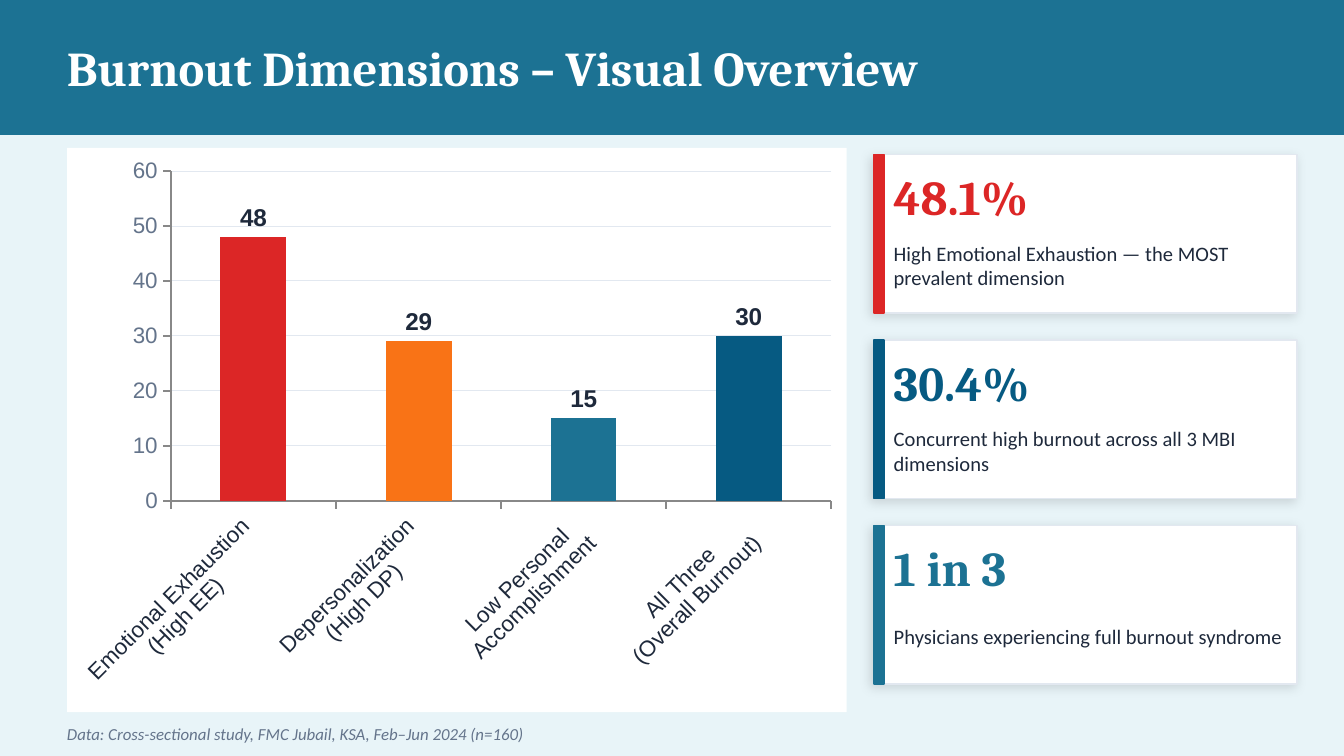
from dataclasses import dataclass
from typing import NamedTuple

from lxml.etree import SubElement
from pptx import Presentation
from pptx.chart.chart import Chart
from pptx.chart.data import CategoryChartData
from pptx.dml.color import RGBColor
from pptx.enum.chart import XL_CHART_TYPE, XL_LABEL_POSITION, XL_TICK_LABEL_POSITION, XL_TICK_MARK
from pptx.enum.shapes import MSO_SHAPE
from pptx.enum.text import MSO_ANCHOR
from pptx.oxml import parse_xml
from pptx.oxml.ns import nsdecls, qn
from pptx.shapes.autoshape import Shape
from pptx.slide import Slide
from pptx.util import Emu, Pt

EMU_PER_PX = 4572


@dataclass(frozen=True)
class Theme:
    background: str = "E8F4F8"
    white: str = "FFFFFF"
    teal: str = "1C7293"
    red: str = "DC2626"
    orange: str = "F97316"
    navy: str = "065A82"
    ink: str = "1E293B"
    muted: str = "64748B"
    border: str = "E2E8F0"
    axis: str = "888888"
    heading_font: str = "Cambria"
    body_font: str = "Calibri"
    chart_font: str = "Arial"
    heading_size: int = 26
    body_size: int = 11
    source_size: int = 9
    axis_size: int = 12
    label_size: int = 13


class Box(NamedTuple):
    left: int
    top: int
    width: int
    height: int

    def emu(self) -> tuple[Emu, ...]:
        return tuple(Emu(length * EMU_PER_PX) for length in self)


class TextStyle(NamedTuple):
    font: str
    size: int
    color: str
    bold: bool = False
    italic: bool = False


class Bar(NamedTuple):
    category: str
    percent: int
    color: str


class Card(NamedTuple):
    figure: str
    caption: str
    color: str


THEME = Theme()
CARD_TOP = 230
CARD_STEP = 276
BARS = [
    Bar("Emotional Exhaustion\n(High EE)", 48, THEME.red),
    Bar("Depersonalization\n(High DP)", 29, THEME.orange),
    Bar("Low Personal\nAccomplishment", 15, THEME.teal),
    Bar("All Three\n(Overall Burnout)", 30, THEME.navy),
]
CARDS = [
    Card("48.1%", "High Emotional Exhaustion — the MOST prevalent dimension", THEME.red),
    Card("30.4%", "Concurrent high burnout across all 3 MBI dimensions", THEME.navy),
    Card("1 in 3", "Physicians experiencing full burnout syndrome", THEME.teal),
]


def rgb(color: str) -> RGBColor:
    return RGBColor.from_string(color)


def style_font(font, style: TextStyle) -> None:
    font.name = style.font
    font.size = Pt(style.size)
    font.bold = style.bold
    font.italic = style.italic
    font.color.rgb = rgb(style.color)


def add_rectangle(slide: Slide, box: Box, fill: str, line: str) -> Shape:
    shape = slide.shapes.add_shape(MSO_SHAPE.RECTANGLE, *box.emu())
    shape.fill.solid()
    shape.fill.fore_color.rgb = rgb(fill)
    shape.line.color.rgb = rgb(line)
    shape.line.width = Pt(1)
    shape.shadow.inherit = False
    return shape


def add_soft_shadow(shape: Shape) -> None:
    effects = shape._element.spPr.find(qn("a:effectLst"))
    shadow = SubElement(effects, qn("a:outerShdw"), blurRad=str(Pt(6)), dist=str(Pt(2)),
                        dir=str(135 * 60000), algn="bl", rotWithShape="0")
    color = SubElement(shadow, qn("a:srgbClr"), val="000000")
    SubElement(color, qn("a:alpha"), val="12000")


def add_text(slide: Slide, box: Box, text: str, style: TextStyle, inset: bool = True) -> None:
    text_frame = slide.shapes.add_textbox(*box.emu()).text_frame
    text_frame.word_wrap = True
    text_frame.vertical_anchor = MSO_ANCHOR.MIDDLE
    if not inset:
        text_frame.margin_left = text_frame.margin_right = 0
        text_frame.margin_top = text_frame.margin_bottom = 0
    text_frame.text = text
    style_font(text_frame.paragraphs[0].runs[0].font, style)


def add_card(slide: Slide, card: Card, top: int) -> None:
    panel = add_rectangle(slide, Box(1300, top, 630, 236), THEME.white, THEME.border)
    add_soft_shadow(panel)
    add_rectangle(slide, Box(1300, top, 16, 236), card.color, card.color)
    add_text(slide, Box(1330, top + 20, 580, 84), card.figure,
             TextStyle(THEME.heading_font, THEME.heading_size, card.color, bold=True), inset=False)
    add_text(slide, Box(1330, top + 110, 580, 110), card.caption,
             TextStyle(THEME.body_font, THEME.body_size, THEME.ink), inset=False)


def style_axis(axis, color: str) -> None:
    axis.major_tick_mark = XL_TICK_MARK.OUTSIDE
    axis.minor_tick_mark = XL_TICK_MARK.NONE
    axis.format.line.color.rgb = rgb(THEME.axis)
    axis.format.line.width = Pt(1)
    style_font(axis.tick_labels.font, TextStyle(THEME.chart_font, THEME.axis_size, color))


def fill_chart_background(chart: Chart) -> None:
    properties = parse_xml(
        f'<c:spPr {nsdecls("c", "a")}><a:solidFill><a:srgbClr val="{THEME.white}"/></a:solidFill>'
        "<a:ln><a:noFill/></a:ln></c:spPr>"
    )
    chart._chartSpace.find(qn("c:chart")).addnext(properties)


def add_burnout_chart(slide: Slide, box: Box, bars: list[Bar]) -> None:
    chart_data = CategoryChartData()
    chart_data.categories = [bar.category for bar in bars]
    chart_data.add_series("Series 1", [bar.percent for bar in bars])
    chart = slide.shapes.add_chart(XL_CHART_TYPE.COLUMN_CLUSTERED, *box.emu(), chart_data).chart
    chart.has_legend = False
    chart.has_title = False
    style_font(chart.font, TextStyle(THEME.body_font, 10, "000000"))
    fill_chart_background(chart)

    style_axis(chart.category_axis, THEME.ink)
    chart.category_axis.tick_label_position = XL_TICK_LABEL_POSITION.LOW
    label_body = chart.category_axis._element.find(qn("c:txPr")).find(qn("a:bodyPr"))
    label_body.set("rot", str(-45 * 60000))

    value_axis = chart.value_axis
    style_axis(value_axis, THEME.muted)
    value_axis.minimum_scale = 0
    value_axis.maximum_scale = 60
    value_axis.major_unit = 10
    value_axis.major_gridlines.format.line.color.rgb = rgb(THEME.border)
    value_axis.major_gridlines.format.line.width = Pt(0.5)

    plot = chart.plots[0]
    plot.gap_width = 150
    plot.vary_by_categories = False
    series = plot.series[0]
    series.format.fill.solid()
    series.format.fill.fore_color.rgb = rgb(bars[0].color)
    for index, bar in enumerate(bars[1:], start=1):
        fill = series.points[index].format.fill
        fill.solid()
        fill.fore_color.rgb = rgb(bar.color)

    labels = series.data_labels
    labels.show_value = True
    labels.number_format = "#,##0"
    labels.number_format_is_linked = False
    labels.position = XL_LABEL_POSITION.OUTSIDE_END
    style_font(labels.font, TextStyle(THEME.chart_font, THEME.label_size, THEME.ink, bold=True))


def main() -> None:
    presentation = Presentation()
    presentation.slide_width = Emu(2000 * EMU_PER_PX)
    presentation.slide_height = Emu(1125 * EMU_PER_PX)
    slide = presentation.slides.add_slide(presentation.slide_layouts[6])
    slide.background.fill.solid()
    slide.background.fill.fore_color.rgb = rgb(THEME.background)

    add_rectangle(slide, Box(0, 0, 2000, 200), THEME.teal, THEME.teal)
    add_text(slide, Box(80, 0, 1840, 200), "Burnout Dimensions – Visual Overview",
             TextStyle(THEME.heading_font, THEME.heading_size, THEME.white, bold=True))
    add_burnout_chart(slide, Box(100, 220, 1160, 840), BARS)
    for index, card in enumerate(CARDS):
        add_card(slide, card, CARD_TOP + index * CARD_STEP)
    add_text(slide, Box(80, 1070, 1840, 44),
             "Data: Cross-sectional study, FMC Jubail, KSA, Feb–Jun 2024 (n=160)",
             TextStyle(THEME.body_font, THEME.source_size, THEME.muted, italic=True))
    presentation.save("out.pptx")


if __name__ == "__main__":
    main()
